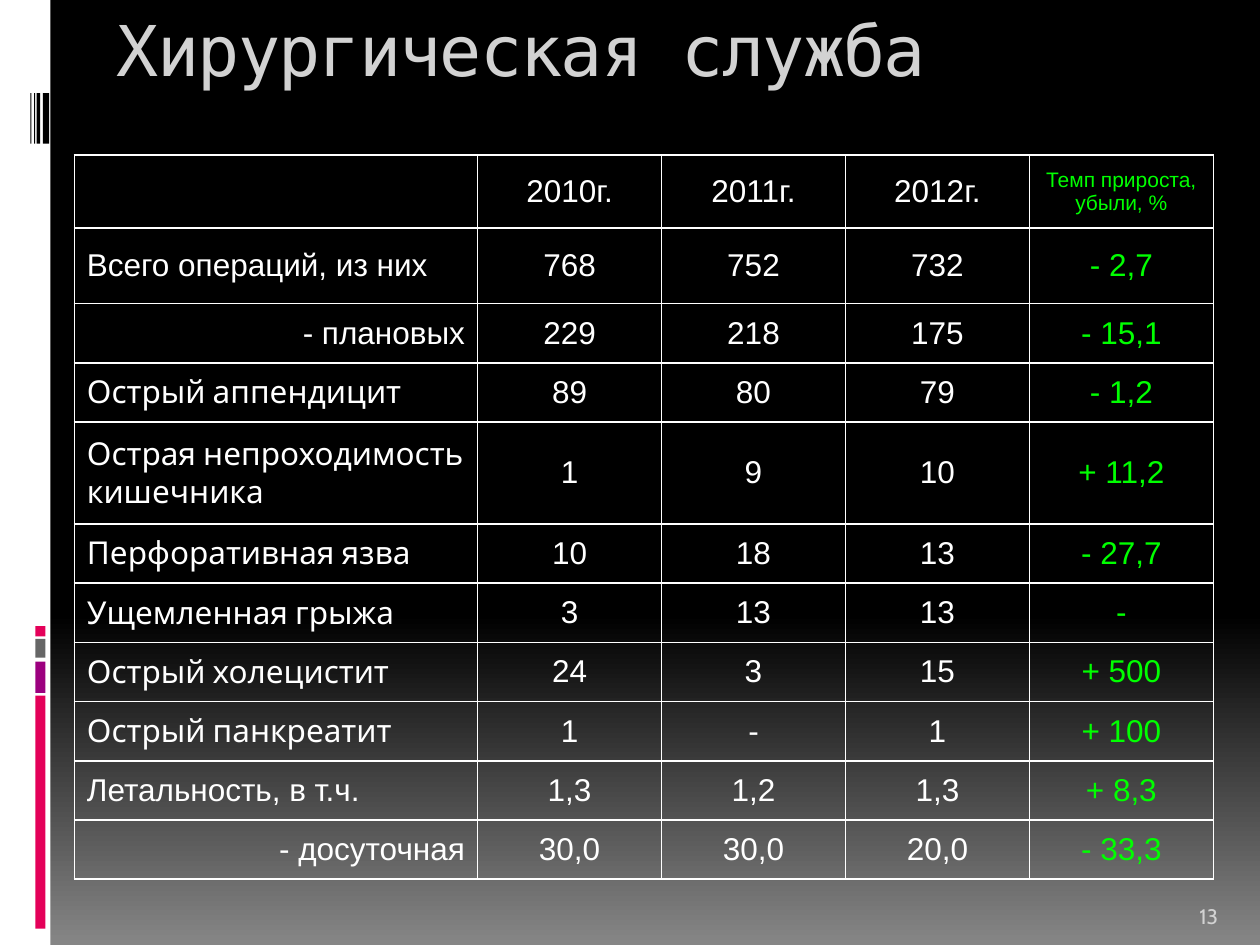
from lxml.etree import SubElement
from pptx import Presentation
from pptx.dml.color import RGBColor
from pptx.enum.shapes import MSO_SHAPE as Shape
from pptx.enum.text import MSO_ANCHOR as Anchor, PP_ALIGN as Align
from pptx.oxml.ns import qn
from pptx.util import Inches, Pt

WHITE, BLACK, GREEN, GREY = "FFFFFF", "000000", "00FF00", "D2D2D2"
PINK, PURPLE, SLATE = "E40059", "9C007F", "666666"

TITLE = "Хирургическая служба"
PAGE = "13"
ROWS = [
    ("", "2010г.", "2011г.", "2012г.", "Темп прироста, убыли, %"),
    ("Всего операций, из них", "768", "752", "732", "- 2,7"),
    ("- плановых", "229", "218", "175", "- 15,1"),
    ("Острый аппендицит", "89", "80", "79", "- 1,2"),
    ("Острая непроходимость кишечника", "1", "9", "10", "+ 11,2"),
    ("Перфоративная язва", "10", "18", "13", "- 27,7"),
    ("Ущемленная грыжа", "3", "13", "13", "-"),
    ("Острый холецистит", "24", "3", "15", "+ 500"),
    ("Острый панкреатит", "1", "-", "1", "+ 100"),
    ("Летальность, в т.ч.", "1,3", "1,2", "1,3", "+ 8,3"),
    ("- досуточная", "30,0", "30,0", "20,0", "- 33,3"),
]
WIDTHS = [3.2] + [1.46] * 4
HEIGHTS = {0: 0.58, 1: 0.6, 4: 0.81}
HEIGHT = 0.47
DISEASES = range(3, 9)

# left, top, width, height, colour
BARS = [(0, 0, 0.4, 7.5, WHITE)]
BARS += [(0.28, top, 0.08, high, color) for top, high, color in (
    (5.52, 1.85, PINK), (5.25, 0.25, PURPLE), (5.07, 0.15, SLATE), (4.97, 0.08, PINK))]
BARS += [(left, 0.74, wide, 0.4, BLACK) for left, wide in (
    (0.34, 0.05), (0.29, 0.03), (0.27, 0.01), (0.24, 0.01))]


def rgb(color):
    return RGBColor.from_string(color)


def style(para, size, face, color, align=Align.LEFT):
    para.alignment = align
    font = para.font
    font.size, font.name = Pt(size), face
    font.color.rgb = rgb(color)


def add_bar(left, top, wide, high, color):
    bar = slide.shapes.add_shape(
        Shape.RECTANGLE, Inches(left), Inches(top), Inches(wide), Inches(high))
    bar.shadow.inherit = False
    bar.fill.solid()
    bar.fill.fore_color.rgb = rgb(color)
    bar.line.fill.background()


def add_text(text, box, anchor, size, face, color):
    frame = slide.shapes.add_textbox(*map(Inches, box)).text_frame
    frame.word_wrap = True
    frame.vertical_anchor = anchor
    para = frame.paragraphs[0]
    para.text = text
    style(para, size, face, color)
    return para


def add_borders(cell):
    props = cell._tc.get_or_add_tcPr()
    for side in ("a:lnL", "a:lnR", "a:lnT", "a:lnB"):
        line = SubElement(props, qn(side), w=str(Pt(1)))
        fill = SubElement(line, qn("a:solidFill"))
        SubElement(fill, qn("a:srgbClr"), val=WHITE)


def fill_cell(cell, text, row, col):
    add_borders(cell)
    cell.fill.background()
    cell.vertical_anchor = Anchor.MIDDLE
    cell.text = text
    align = Align.CENTER
    if col == 0:
        align = Align.RIGHT if text.startswith("-") else Align.LEFT
    last = col == len(WIDTHS) - 1
    style(cell.text_frame.paragraphs[0],
          12 if last and row == 0 else 18,
          "Cabin" if col == 0 and row in DISEASES else "Arial",
          GREEN if last else WHITE, align)


def add_table():
    highs = [HEIGHTS.get(row, HEIGHT) for row in range(len(ROWS))]
    table = slide.shapes.add_table(
        len(ROWS), len(WIDTHS), Inches(0.59), Inches(1.23),
        Inches(sum(WIDTHS)), Inches(sum(highs))).table
    table.first_row = table.horz_banding = False
    for col, wide in enumerate(WIDTHS):
        table.columns[col].width = Inches(wide)
    for row, texts in enumerate(ROWS):
        table.rows[row].height = Inches(highs[row])
        for col, text in enumerate(texts):
            fill_cell(table.cell(row, col), text, row, col)


deck = Presentation()
deck.slide_width, deck.slide_height = Inches(10), Inches(7.5)
slide = deck.slides.add_slide(deck.slide_layouts[6])

back = slide.background.fill
back.gradient()
back.gradient_angle = 270
for stop, (place, color) in zip(back.gradient_stops, ((0.65, BLACK), (1, "868686"))):
    stop.position = place
    stop.color.rgb = rgb(color)

for bar in BARS:
    add_bar(*bar)
title = add_text(TITLE, (0.83, 0, 8.5, 1), Anchor.TOP, 40, "DejaVu Sans Mono", GREY)
title.runs[0].font._element.set("spc", "-100")
add_table()
add_text(PAGE, (9.42, 7.02, 0.5, 0.4), Anchor.BOTTOM, 12, "Cabin", GREY)

deck.save("out.pptx")
